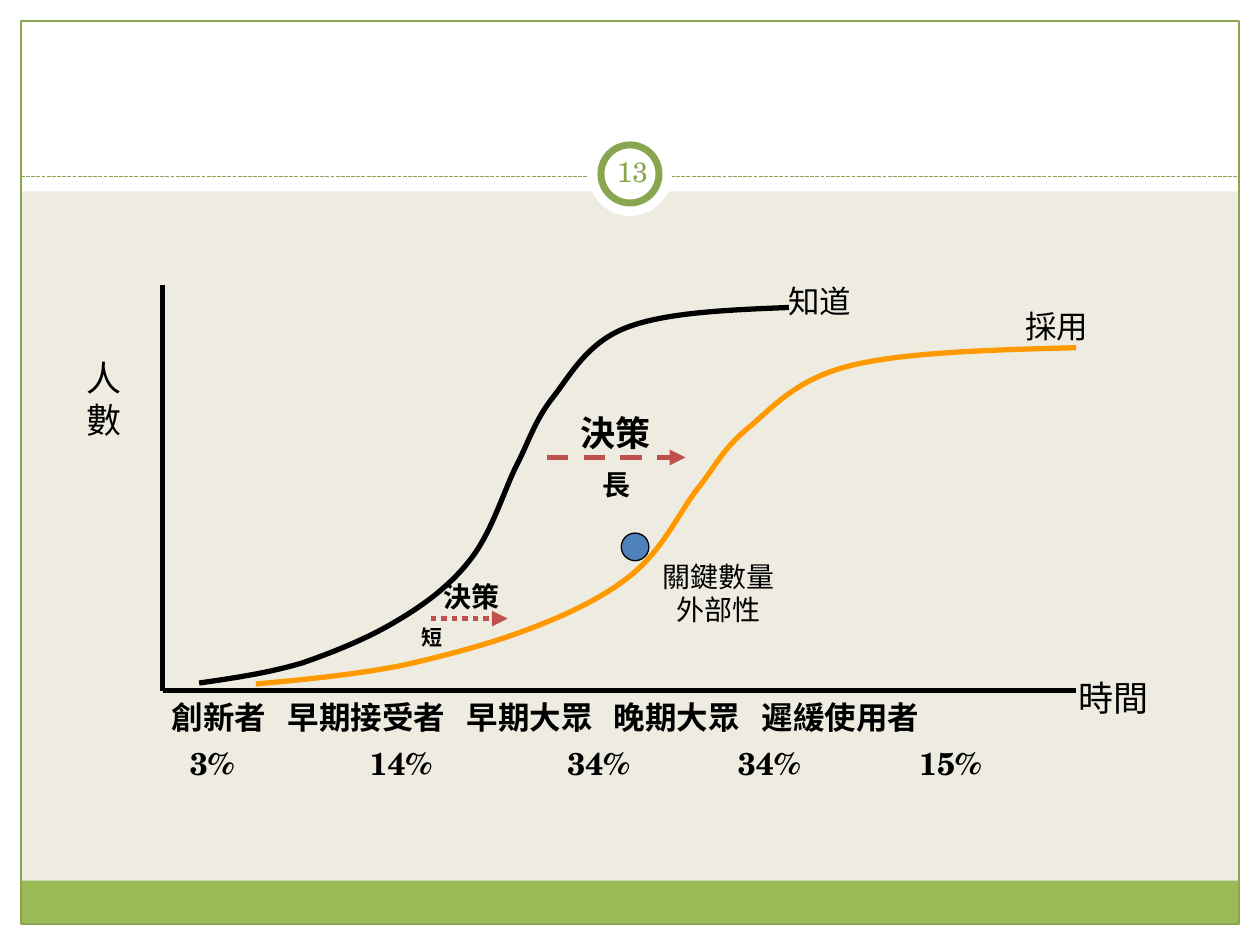
from lxml.etree import SubElement
from pptx import Presentation
from pptx.dml.color import RGBColor
from pptx.enum.dml import MSO_LINE
from pptx.enum.shapes import MSO_CONNECTOR, MSO_SHAPE
from pptx.enum.text import MSO_ANCHOR, PP_ALIGN
from pptx.oxml.ns import qn
from pptx.util import Pt

COLORS = {
    "paper": "EEECE1", "white": "FFFFFF", "band": "9BBB59", "frame": "89A54F",
    "ink": "000000", "adopt": "FF9900", "decision": "C0504D", "dot": "4F81BD",
}
CJK = "Noto Sans CJK SC"
SERIF = "Times New Roman"
SCHOLA = "TeX Gyre Schola"
CURVE_SIZE = (468, 298)
S_CURVE = [
    (0, 298), (28, 294), (55, 290), (82, 282), (108, 273), (135, 262),
    (158, 248), (180, 235), (201, 219), (216, 199), (232, 178), (241, 148),
    (251, 127), (262, 106), (266, 90), (281, 71), (295, 53), (308, 28),
    (339, 16), (370, 4), (419, 2), (468, 0),
]
LABELS = [
    ("時間", 567.1, 227.1, 54.7, 31, 20, False),
    ("知道", 401.5, 1.7, 50.4, 28.8, 18, False),
    ("採用", 536.9, 16.1, 50.4, 28.8, 18, False),
    ("人\n數", 0.5, 44.2, 34.6, 55.4, 20, False),
    ("決策", 282.7, 75.8, 54.7, 31, 20, True),
    ("長", 295, 107.5, 30.2, 26.6, 16, True),
    ("決策", 204.2, 171.6, 46.1, 26.6, 16, True),
    ("短", 192, 197.5, 25.9, 21.6, 12, True),
    ("關鍵數量\n外部性", 329.5, 160.1, 78.5, 46.1, 16, False),
]
ADOPTERS = [
    ("創新者", 49.1, "3%", 59.4),
    ("早期接受者", 115.4, "14%", 162.1),
    ("早期大眾", 217.6, "34%", 275.1),
    ("晚期大眾", 301.6, "34%", 372.6),
    ("遲緩使用者", 386.1, "15%", 476.1),
]


def rgb(name):
    """Return the named colour."""
    return RGBColor.from_string(COLORS[name])


def add_shape(shapes, kind, x, y, w, h, fill=None, line=None, width=0.75):
    """Add a preset shape with an optional fill and outline."""
    sp = shapes.add_shape(kind, Pt(x), Pt(y), Pt(w), Pt(h))
    sp.shadow.inherit = False
    if fill:
        sp.fill.solid()
        sp.fill.fore_color.rgb = rgb(fill)
    else:
        sp.fill.background()
    if line:
        sp.line.color.rgb = rgb(line)
        sp.line.width = Pt(width)
    else:
        sp.line.fill.background()
    return sp


def add_line(shapes, x1, y1, x2, y2, color, width=3, dash=None, arrow=False):
    """Add a straight line, dashed or with an arrowhead if asked."""
    ln = shapes.add_connector(MSO_CONNECTOR.STRAIGHT, Pt(x1), Pt(y1), Pt(x2), Pt(y2))
    ln.line.color.rgb = rgb(color)
    ln.line.width = Pt(width)
    if dash:
        ln.line.dash_style = dash
    if arrow:
        SubElement(ln._element.spPr.find(qn("a:ln")), qn("a:tailEnd"), type="triangle")
    SubElement(ln._element.spPr, qn("a:effectLst"))
    return ln


def style(p, size, color="ink", bold=False, font=SERIF):
    """Set the font of a paragraph for Latin and East Asian text."""
    p.font.size = Pt(size)
    p.font.bold = bold
    p.font.color.rgb = rgb(color)
    p.font.name = font
    SubElement(p._p.pPr.find(qn("a:defRPr")), qn("a:ea"), typeface=CJK)


def add_text(shapes, text, x, y, w, h, size, bold=False, color="ink", font=SERIF,
             wrap=False):
    """Add a text box with one paragraph per line."""
    tb = shapes.add_textbox(Pt(x), Pt(y), Pt(w), Pt(h))
    tf = tb.text_frame
    tf.word_wrap = wrap
    for i, line in enumerate(text.split("\n")):
        p = tf.paragraphs[0] if i == 0 else tf.add_paragraph()
        p.text = line
        style(p, size, color, bold, font)
    return tf


def add_curve(shapes, x, y, w, h, color):
    """Fit the S-curve into a box as a chain of Bézier segments."""
    sx, sy = w / CURVE_SIZE[0], h / CURVE_SIZE[1]
    points = [(Pt(x + px * sx), Pt(y + py * sy)) for px, py in S_CURVE]
    builder = shapes.build_freeform(*points[0])
    builder.add_line_segments(points[1:], close=False)
    sp = builder.convert_to_shape()
    sp.shadow.inherit = False
    sp.fill.background()
    sp.line.color.rgb = rgb(color)
    sp.line.width = Pt(3)
    path = next(sp._element.iter(qn("a:path")))
    steps = path.findall(qn("a:lnTo"))
    for i in range(0, len(steps), 3):
        curve = SubElement(path, qn("a:cubicBezTo"))
        for step in steps[i:i + 3]:
            curve.append(step[0])
            path.remove(step)


def add_frame(s, x, y, w, h):
    """Draw the white margins, green frame and page number."""
    rect, oval = MSO_SHAPE.RECTANGLE, MSO_SHAPE.OVAL
    m = 12
    for bar in [(x, y + h - m, w, m), (x, y, w, 109.4),
                (x, y, m, h), (x + w - m, y, m, h)]:
        add_shape(s.shapes, rect, *bar, fill="white")
    add_shape(s.shapes, rect, x + m, y + 503.3, w - 2 * m, 24.5, fill="band")
    add_shape(s.shapes, rect, x + m, y + m, w - 2 * m, h - 2 * m, line="frame")
    add_line(s.shapes, x + m, y + 100.8, x + w - m, y + 100.8, "frame", 0.75,
             MSO_LINE.SQUARE_DOT)
    cx, cy = x + w / 2, y + 99.4
    for r, line in [(24, None), (16.6, "frame")]:
        add_shape(s.shapes, oval, cx - r, cy - r, 2 * r, 2 * r, "white", line, 4)
    tf = add_text(s.shapes, "13", cx - 16.6, y + 80.6, 36, 34.6, 16,
                  color="frame", font=SCHOLA, wrap=True)
    tf.vertical_anchor = MSO_ANCHOR.MIDDLE
    tf.margin_left = tf.margin_right = tf.margin_top = tf.margin_bottom = Pt(3.6)
    tf.paragraphs[0].alignment = PP_ALIGN.CENTER


def add_adopters(shapes, x, y):
    """Name the adopter groups and their shares below the time axis."""
    for group, group_x, share, share_x in ADOPTERS:
        add_text(shapes, group, x + group_x, y, 18 * len(group) + 20, 33.3, 18, True,
                 font=CJK, wrap=True)
        add_text(shapes, share, x + share_x, y + 26.1, 60, 28.8, 18, True,
                 font=SCHOLA, wrap=True)


def add_diffusion(s, x, y):
    """Draw the awareness and adoption curves with axes and labels."""
    shapes = s.shapes.add_group_shape().shapes
    base, left = y + 238.6, x + 50.9
    add_line(shapes, left, y + 6.7, left, base, "ink")
    add_line(shapes, left, base, x + 572.9, base, "ink")
    add_curve(shapes, x + 104.2, y + 42.7, 468.7, 192.2, "adopt")
    add_curve(shapes, x + 71.8, y + 19.7, 337, 214.6, "ink")
    for dx, dy, length, dash in [(270.5, 105.4, 79.2, MSO_LINE.DASH),
                                 (204.2, 197.5, 43.9, MSO_LINE.ROUND_DOT)]:
        add_line(shapes, x + dx, y + dy, x + dx + length, y + dy, "decision",
                 dash=dash, arrow=True)
    add_shape(shapes, MSO_SHAPE.OVAL, x + 313, y + 148.6, 15.8, 15.8, "dot", "ink")
    for text, dx, dy, w, h, size, bold in LABELS:
        tf = add_text(shapes, text, x + dx, y + dy, w, h, size, bold)
    for p in tf.paragraphs:
        p.alignment = PP_ALIGN.CENTER
    add_adopters(shapes, x, y + 239.3)


def main():
    """Build and save the slide."""
    prs = Presentation()
    prs.slide_width, prs.slide_height = Pt(720), Pt(540)
    s = prs.slides.add_slide(prs.slide_layouts[6])
    s.background.fill.solid()
    s.background.fill.fore_color.rgb = rgb("paper")
    add_frame(s, 0, 0, 720, 540)
    add_diffusion(s, 42, 156)
    prs.save("out.pptx")


if __name__ == "__main__":
    main()
